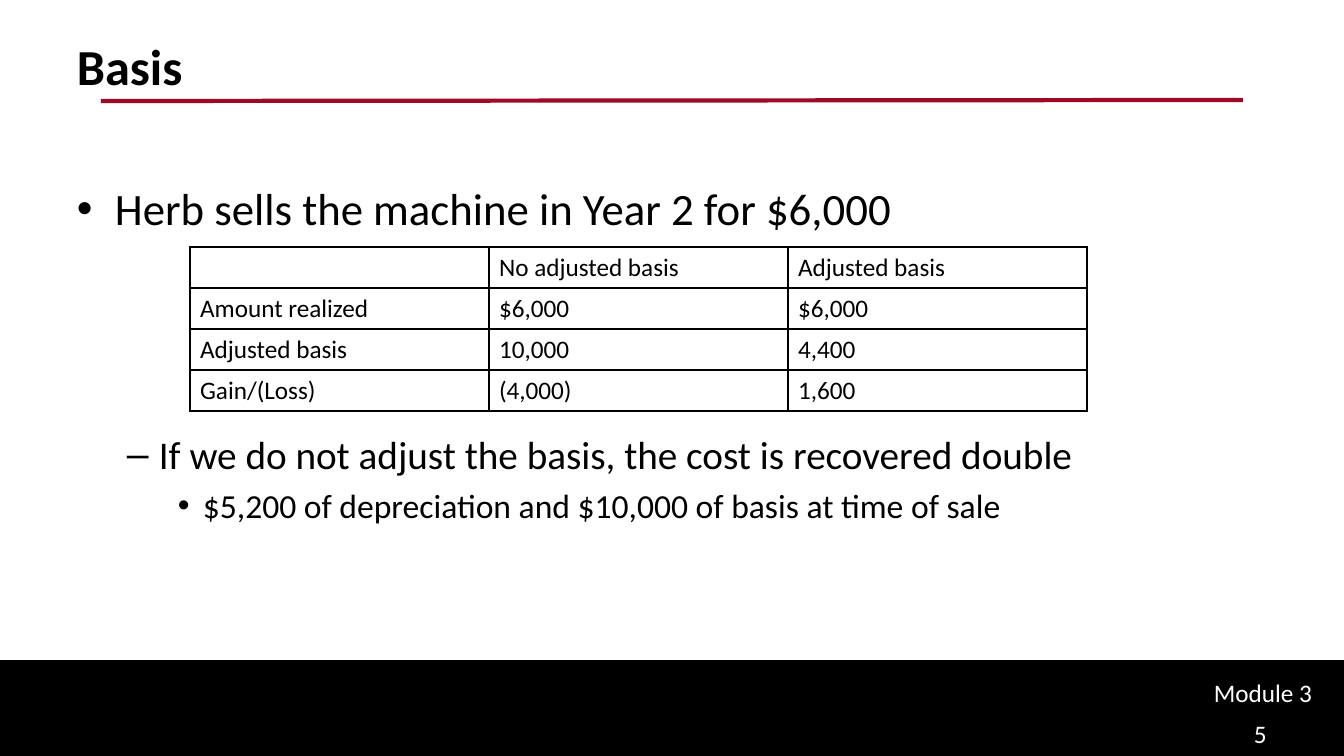
"""Build the Basis slide with its comparison table and bulleted text."""
from lxml.etree import SubElement
from pptx import Presentation
from pptx.dml.color import RGBColor
from pptx.enum.shapes import MSO_CONNECTOR, MSO_SHAPE
from pptx.oxml.ns import qn
from pptx.util import Pt

COLORS = {"black": "000000", "white": "FFFFFF", "red": "9E0926"}
FONT = "Calibri"
SCALE = 914400 / 100.8
SLIDE_WIDTH, SLIDE_HEIGHT = 1344, 756

TITLE = ("Basis", (67, 30, 1210, 126), 36, True, "black")
FOOTERS = [
    ("Module 3", (1204, 672, 133, 40), 18, False, "white"),
    ("5", (1244, 713, 92, 43), 18, False, "white"),
]
BODY_BOX = (67, 176, 1210, 432)
BODY = [
    ("Herb sells the machine in Year 2 for $6,000", "•", 32, 38, 38, 0),
    ("If we do not adjust the basis, the cost is recovered double", "–", 28, 82, 32, 140),
    ("$5,200 of depreciation and $10,000 of basis at time of sale", "•", 24, 126, 25, 5),
]
TABLE_LEFT, TABLE_TOP, COLUMN_WIDTH, ROW_HEIGHT = 190, 247, 299, 41
TABLE = [
    ("", "No adjusted basis", "Adjusted basis"),
    ("Amount realized", "$6,000", "$6,000"),
    ("Adjusted basis", "10,000", "4,400"),
    ("Gain/(Loss)", "(4,000)", "1,600"),
]
RULE = (101, 101, 1243, 100)
BAR = (0, 661, SLIDE_WIDTH, 95)


def px(*lengths):
    return [round(length * SCALE) for length in lengths]


def color(name):
    return RGBColor.from_string(COLORS[name])


def set_font(paragraph, size, color_name="black", bold=False):
    font = paragraph.font
    font.name, font.size, font.bold = FONT, Pt(size), bold
    font.color.rgb = color(color_name)


def add_frame(slide, box):
    frame = slide.shapes.add_textbox(*px(*box)).text_frame
    frame.word_wrap = True
    return frame


def add_label(slide, text, box, size, bold, color_name):
    paragraph = add_frame(slide, box).paragraphs[0]
    paragraph.text = text
    set_font(paragraph, size, color_name, bold)


def add_body(slide):
    frame = add_frame(slide, BODY_BOX)
    for index, (text, bullet, size, margin, hanging, space) in enumerate(BODY):
        paragraph = frame.add_paragraph() if index else frame.paragraphs[0]
        paragraph.text = text
        paragraph.level = index
        if space:
            paragraph.space_before = Pt(space)
        properties = paragraph._p.get_or_add_pPr()
        left, indent = px(margin, -hanging)
        properties.set("marL", str(left))
        properties.set("indent", str(indent))
        SubElement(properties, qn("a:buFont"), typeface="Arial")
        SubElement(properties, qn("a:buChar"), char=bullet)
        set_font(paragraph, size)


def set_borders(cell):
    properties = cell._tc.get_or_add_tcPr()
    for side in ("lnL", "lnR", "lnT", "lnB"):
        line = SubElement(properties, qn(f"a:{side}"), w=str(Pt(1)))
        fill = SubElement(line, qn("a:solidFill"))
        SubElement(fill, qn("a:srgbClr"), val=COLORS["black"])


def add_comparison(slide):
    rows, columns = len(TABLE), len(TABLE[0])
    box = px(TABLE_LEFT, TABLE_TOP, COLUMN_WIDTH * columns, ROW_HEIGHT * rows)
    table = slide.shapes.add_table(rows, columns, *box).table
    table.first_row = table.horz_banding = False
    for row, texts in enumerate(TABLE):
        for column, text in enumerate(texts):
            cell = table.cell(row, column)
            cell.text = text
            set_font(cell.text_frame.paragraphs[0], 18)
            set_borders(cell)
            cell.fill.background()


def add_decoration(slide):
    bar = slide.shapes.add_shape(MSO_SHAPE.RECTANGLE, *px(*BAR))
    bar.shadow.inherit = False
    bar.fill.solid()
    bar.fill.fore_color.rgb = bar.line.color.rgb = color("black")
    bar.line.width = Pt(2)
    rule = slide.shapes.add_connector(MSO_CONNECTOR.STRAIGHT, *px(*RULE))
    rule.line.color.rgb = color("red")
    rule.line.width = Pt(3)
    SubElement(rule._element.spPr, qn("a:effectLst"))


def main():
    presentation = Presentation()
    presentation.slide_width, presentation.slide_height = px(SLIDE_WIDTH, SLIDE_HEIGHT)
    slide = presentation.slides.add_slide(presentation.slide_layouts[6])
    add_decoration(slide)
    add_label(slide, *TITLE)
    add_body(slide)
    for footer in FOOTERS:
        add_label(slide, *footer)
    add_comparison(slide)
    presentation.save("out.pptx")


if __name__ == "__main__":
    main()
